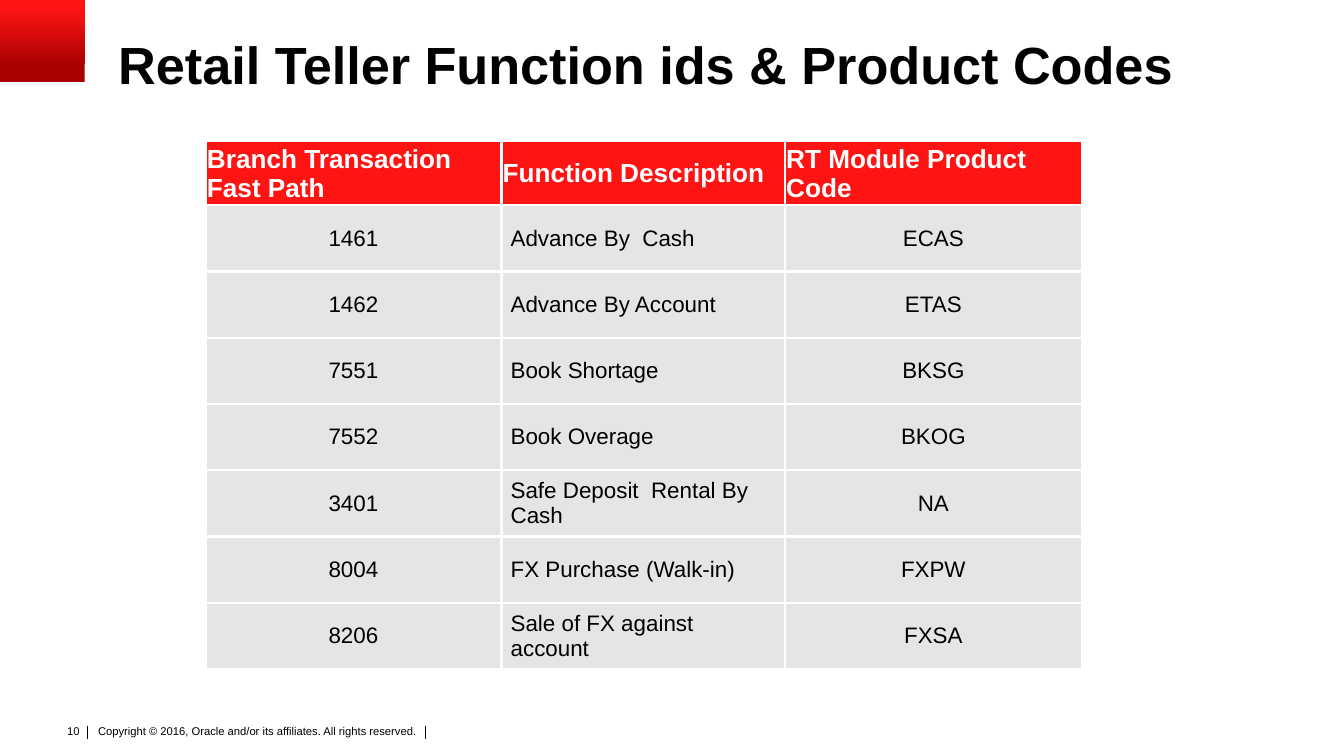
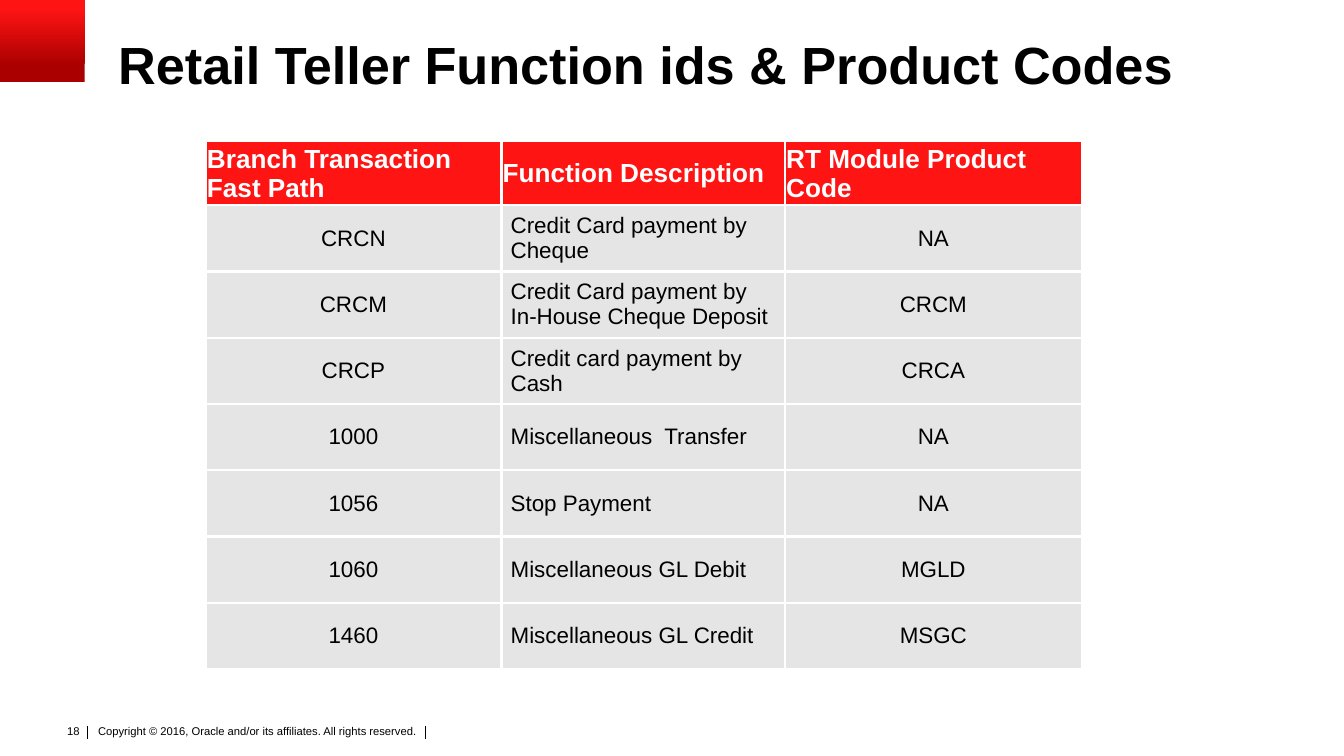
"""Builds two slides listing retail teller function ids and product codes."""
from lxml import etree
from pptx import Presentation
from pptx.dml.color import RGBColor
from pptx.enum.shapes import MSO_CONNECTOR, MSO_SHAPE
from pptx.enum.text import MSO_ANCHOR, PP_ALIGN
from pptx.oxml.ns import qn
from pptx.util import Inches, Pt

LEFT, CENTER, RIGHT = PP_ALIGN.LEFT, PP_ALIGN.CENTER, PP_ALIGN.RIGHT
TOP, MIDDLE, BOTTOM = MSO_ANCHOR.TOP, MSO_ANCHOR.MIDDLE, MSO_ANCHOR.BOTTOM
RECT, STRAIGHT = MSO_SHAPE.RECTANGLE, MSO_CONNECTOR.STRAIGHT

COLORS = {"red": "FF1414", "dark_red": "AA0000", "grey": "E5E5E5",
          "white": "FFFFFF", "black": "000000"}
TITLE = "Retail Teller Function ids & Product Codes"
COPYRIGHT = "Copyright © 2016, Oracle and/or its affiliates. All rights reserved."
HEADER = ("Branch Transaction Fast Path", "Function Description", "RT Module Product Code")
PAGES = {
    10: [("1461", "Advance By  Cash", "ECAS"),
         ("1462", "Advance By Account", "ETAS"),
         ("7551", "Book Shortage", "BKSG"),
         ("7552", "Book Overage", "BKOG"),
         ("3401", "Safe Deposit  Rental By Cash", "NA"),
         ("8004", "FX Purchase (Walk-in)", "FXPW"),
         ("8206", "Sale of FX against account", "FXSA")],
    18: [("CRCN", "Credit Card payment by Cheque", "NA"),
         ("CRCM", "Credit Card payment by In-House Cheque Deposit", "CRCM"),
         ("CRCP", "Credit card payment by Cash", "CRCA"),
         ("1000", "Miscellaneous  Transfer", "NA"),
         ("1056", "Stop Payment", "NA"),
         ("1060", "Miscellaneous GL Debit", "MGLD"),
         ("1460", "Miscellaneous GL Credit", "MSGC")],
}


def rgb(name):
    """Return the named colour."""
    return RGBColor.from_string(COLORS[name])


def grid(n):
    """Turn grid columns or rows, ten to the inch, into a length."""
    return Inches(n / 10)


class Deck:
    """Holds the style and the current slide."""
    font = "Arial"

    def __init__(self):
        """Start an empty deck."""
        self.prs = Presentation()
        self.prs.slide_width, self.prs.slide_height = grid(100), grid(56.25)
        self.s = None

    def new_slide(self, number):
        """Add a slide with corner, title and footer."""
        self.s = self.prs.slides.add_slide(self.prs.slide_layouts[6])
        self.text(COPYRIGHT, (6.9, 53.7, 27.4, 2.4), 6, ins=(0.4, 0.2, 0.4, 0.2))
        for x in (6.5, 31.65):
            self.rule(x, 54, 55)
        self.text(str(number), (3.9, 53.4, 3, 2), 6, align=RIGHT, ins=(0, 0.5, 1, 0.5))
        self.corner(6.3, 6.1)
        self.text(TITLE, (8.8, 2.7, 90, 4.4), 28, bold=True, anchor=BOTTOM, spacing=0.9)

    def run(self, p, text, size, color="black", bold=False):
        """Add a styled run to a paragraph."""
        r = p.add_run()
        r.text = text
        r.font.name, r.font.size, r.font.bold = self.font, Pt(size), bold
        r.font.color.rgb = rgb(color)

    def margins(self, target, ins):
        """Set the left, top, right and bottom margins."""
        (target.margin_left, target.margin_top,
         target.margin_right, target.margin_bottom) = map(grid, ins)

    def text(self, text, box, size, bold=False, align=LEFT, anchor=TOP,
             ins=(0, 0, 0, 0), spacing=None):
        """Add a one-paragraph text box."""
        tf = self.s.shapes.add_textbox(*map(grid, box)).text_frame
        tf.word_wrap, tf.vertical_anchor = True, anchor
        self.margins(tf, ins)
        p = tf.paragraphs[0]
        p.alignment, p.line_spacing = align, spacing
        self.run(p, text, size, bold=bold)

    def rule(self, x, top, bottom):
        """Add a thin vertical line."""
        c = self.s.shapes.add_connector(STRAIGHT, grid(x), grid(top), grid(x), grid(bottom))
        c.line.color.rgb, c.line.width = rgb("black"), Pt(0.5)
        etree.SubElement(c._element.spPr, qn("a:effectLst"))

    def corner(self, width, height):
        """Add the gradient block in the top left corner."""
        sp = self.s.shapes.add_shape(RECT, 0, 0, grid(width), grid(height))
        sp.shadow.inherit = False
        sp.line.fill.background()
        sp.fill.gradient()
        sp.fill.gradient_angle = 90
        for stop, pos, color in zip(sp.fill.gradient_stops, (0.2, 0.9), ("dark_red", "red")):
            stop.position, stop.color.rgb = pos, rgb(color)

    def borders(self, cell):
        """Draw white borders round a cell."""
        tc_pr = cell._tc.get_or_add_tcPr()
        for side in "LRTB":
            ln = etree.SubElement(tc_pr, qn(f"a:ln{side}"), w=str(Pt(1.5)))
            fill = etree.SubElement(ln, qn("a:solidFill"))
            etree.SubElement(fill, qn("a:srgbClr"), val=COLORS["white"])

    def cell(self, cell, text, fill, size, color, bold, align, ins):
        """Fill and style a table cell."""
        self.borders(cell)
        cell.fill.solid()
        cell.fill.fore_color.rgb = rgb(fill)
        cell.vertical_anchor = MIDDLE
        self.margins(cell, ins)
        p = cell.text_frame.paragraphs[0]
        p.alignment = align
        self.run(p, text, size, color, bold)

    def table(self, rows, left, top, widths, head_height, row_height):
        """Add a table with a red header and grey body."""
        height = head_height + row_height * len(rows)
        table = self.s.shapes.add_table(len(rows) + 1, len(widths), grid(left), grid(top),
                                        grid(sum(widths)), grid(height)).table
        table.horz_banding = False
        for column, width in zip(table.columns, widths):
            column.width = grid(width)
        for i, values in enumerate([HEADER, *rows]):
            table.rows[i].height = grid(row_height if i else head_height)
            for j, value in enumerate(values):
                if i:
                    style = ("grey", 12, "black", False,
                             LEFT if j == 1 else CENTER, (0.7, 0, 0.7, 0))
                else:
                    style = ("red", 14, "white", True, LEFT, (0.1, 0.1, 0.1, 0))
                self.cell(table.cell(i, j), value, *style)


def main():
    """Build and save the deck."""
    deck = Deck()
    for number, rows in PAGES.items():
        deck.new_slide(number)
        deck.table(rows, 15.3, 10.5, (22, 21.1, 22.1), 3.2, 4.93)
    deck.prs.save("out.pptx")


if __name__ == "__main__":
    main()
